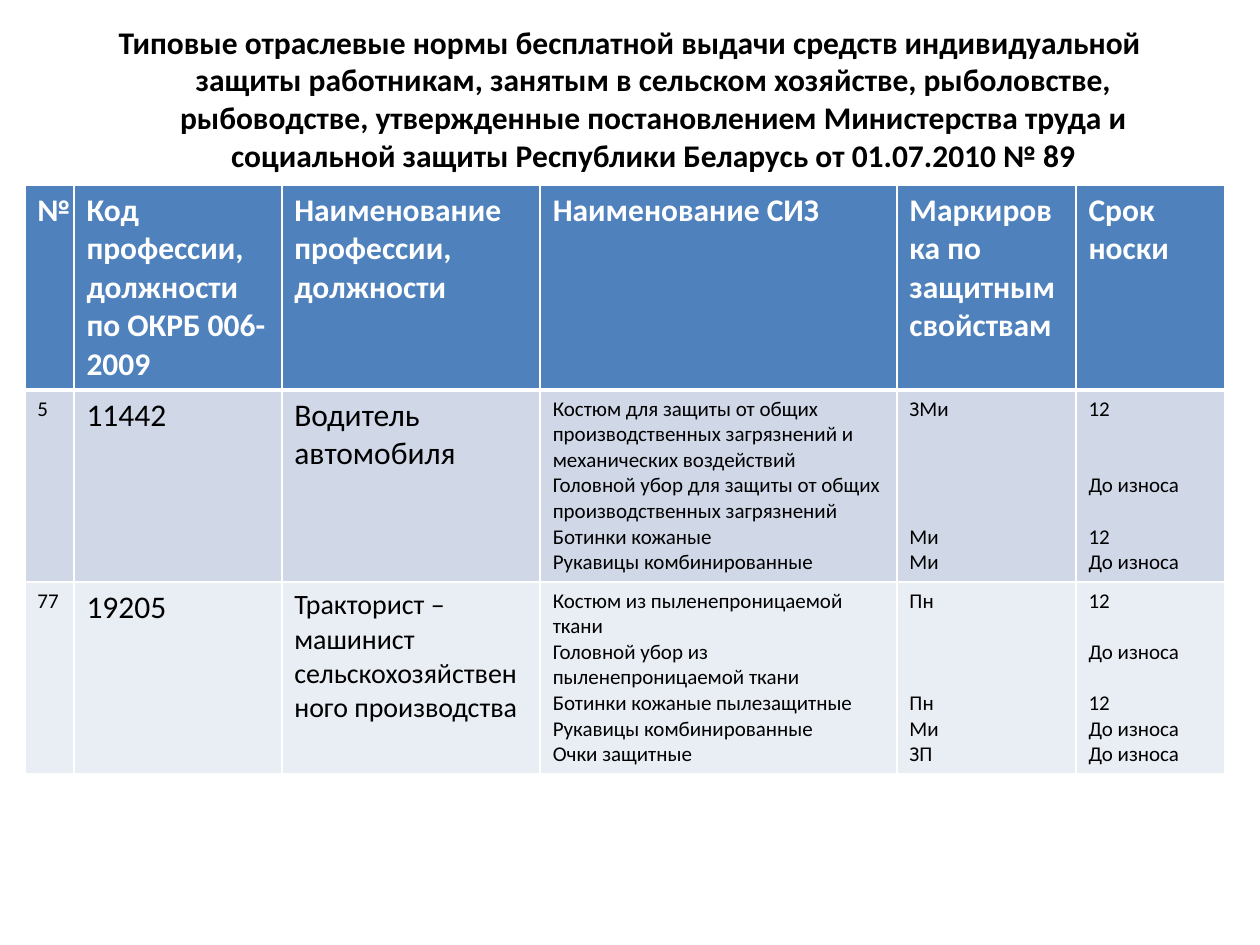
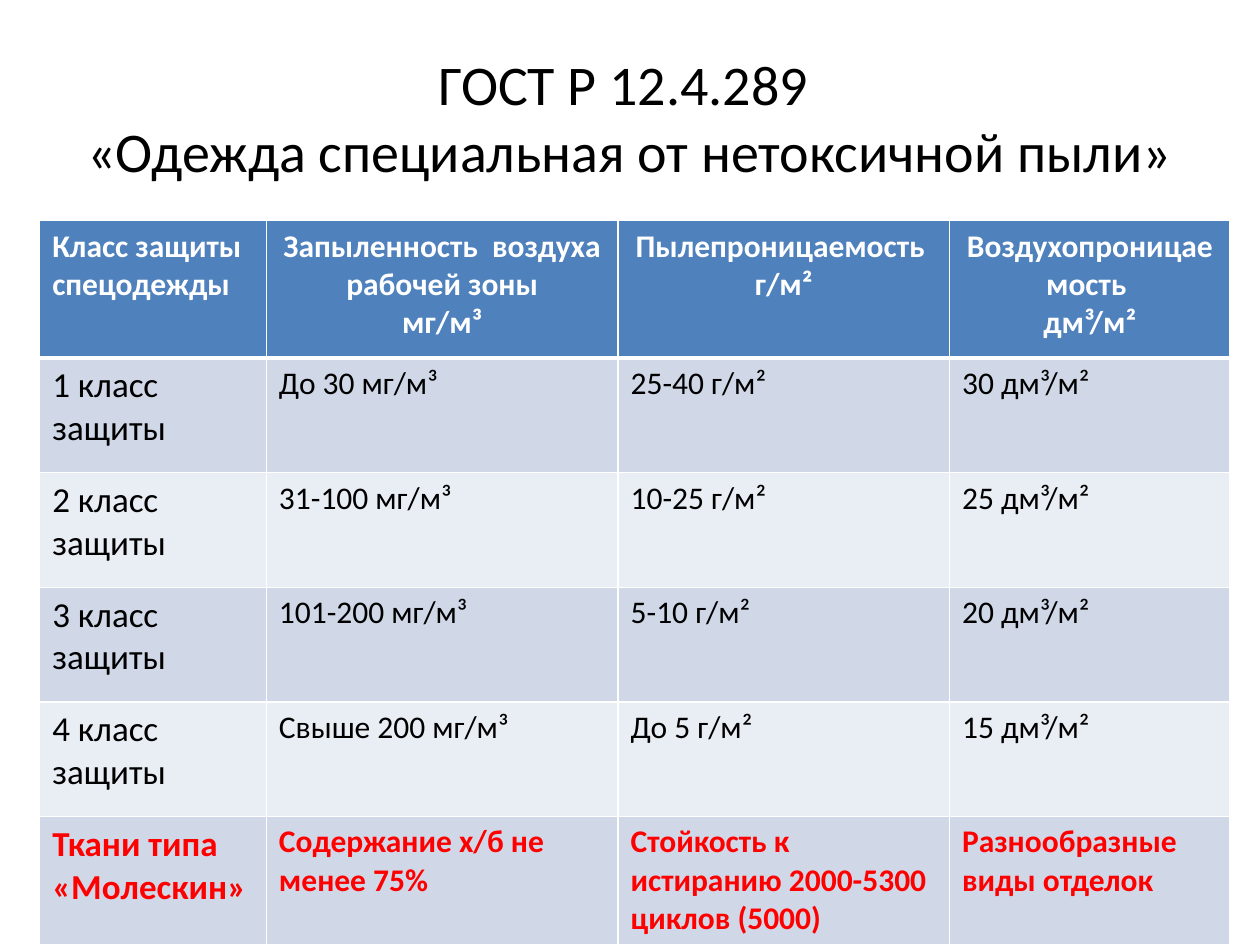
"""Build two slides on protective clothing norms and dust protection classes."""
from lxml import etree
from pptx import Presentation
from pptx.dml.color import RGBColor
from pptx.enum.text import MSO_ANCHOR, MSO_AUTO_SIZE, PP_ALIGN
from pptx.oxml.ns import qn
from pptx.util import Cm, Pt

COLORS = {
    "header": "4F81BD",
    "odd": "D0D8E8",
    "even": "E9EDF4",
    "white": "FFFFFF",
    "text": "000000",
    "accent": "FF0000",
}
FONT = "Calibri"
LINE_FACTOR = 1.22
SMALL = 12
HEADER_FORMAT = {"name": FONT, "size": Pt(18), "bold": True}

NORMS_TITLE = (
    "Типовые отраслевые нормы бесплатной выдачи средств индивидуальной защиты "
    "работникам, занятым в сельском хозяйстве, рыболовстве, рыбоводстве, "
    "утвержденные постановлением Министерства труда и социальной защиты "
    "Республики Беларусь от 01.07.2010 № 89"
)
NORMS_HEADER = [
    "№",
    "Код профессии, должности по ОКРБ 006-2009",
    "Наименование профессии, должности",
    "Наименование СИЗ",
    "Маркировка по защитным свойствам",
    "Срок носки",
]
DRIVER = [
    "5",
    "11442",
    "Водитель автомобиля",
    [
        "Костюм для защиты от общих производственных загрязнений и механических воздействий",
        "Головной убор для защиты от общих производственных загрязнений",
        "Ботинки кожаные",
        "Рукавицы комбинированные",
    ],
    ["ЗМи", (4, "Ми"), "Ми"],
    ["12", (2, "До износа"), (1, "12"), "До износа"],
]
TRACTOR_OPERATOR = [
    "77",
    "19205",
    "Тракторист –машинист сельскохозяйственного производства",
    [
        "Костюм из пыленепроницаемой ткани",
        "Головной убор из пыленепроницаемой ткани",
        "Ботинки кожаные пылезащитные",
        "Рукавицы комбинированные",
        "Очки защитные",
    ],
    ["Пн", (3, "Пн"), "Ми", "ЗП"],
    ["12", (1, "До износа"), (1, "12"), "До износа", "До износа"],
]

DUST_TITLE = "ГОСТ Р 12.4.289 \v«Одежда специальная от нетоксичной пыли»"
DUST_HEADER = [
    "Класс защиты спецодежды",
    ["Запыленность  воздуха рабочей зоны", "мг/м³"],
    ["Пылепроницаемость ", "г/м²"],
    ["Воздухопроницаемость ", "дм³/м²"],
]
DUST_LIMITS = [
    ("До 30", "25-40", 30),
    ("31-100", "10-25", 25),
    ("101-200", "5-10", 20),
    ("Свыше 200", "До 5", 15),
]
FABRIC = [
    "Ткани типа «Молескин»",
    "Содержание х/б не менее 75%",
    ["Стойкость к истиранию 2000-5300", "циклов (5000)"],
    "Разнообразные виды отделок",
]


def rgb(color):
    """Return the named colour."""
    return RGBColor.from_string(COLORS[color])


def format_font(font, formats, color):
    """Apply the format values and the colour to a font."""
    for attribute, value in formats.items():
        setattr(font, attribute, value)
    font.color.rgb = rgb(color)


def add_titled_slide(deck, heading, box, size, bold=False, anchor=MSO_ANCHOR.MIDDLE):
    """Add a title-only slide and format its title."""
    slide = deck.slides.add_slide(deck.slide_layouts[5])
    title = slide.shapes.title
    for side, length in zip(("left", "top", "width", "height"), box):
        setattr(title, side, Cm(length))
    title.text_frame.text = heading
    frame_formats = {"vertical_anchor": anchor, "auto_size": MSO_AUTO_SIZE.NONE, "word_wrap": True}
    for attribute, value in frame_formats.items():
        setattr(title.text_frame, attribute, value)
    paragraph = title.text_frame.paragraphs[0]
    paragraph.alignment = PP_ALIGN.CENTER
    for run in paragraph.runs:
        format_font(run.font, {"name": FONT, "size": Pt(size), "bold": bold}, "text")
    return slide


def hang_indent(paragraph, length):
    """Give a paragraph a hanging indent."""
    properties = paragraph._p.get_or_add_pPr()
    for attribute, value in {"marL": length, "indent": -length}.items():
        properties.set(attribute, str(int(value)))


def draw_borders(cell, top=1, bottom=1):
    """Draw white borders around a cell, with widths in points."""
    properties = cell._tc.get_or_add_tcPr()
    for side, width in {"lnL": 1, "lnR": 1, "lnT": top, "lnB": bottom}.items():
        line = etree.SubElement(properties, qn(f"a:{side}"), w=str(int(Pt(width))))
        fill = etree.SubElement(line, qn("a:solidFill"))
        etree.SubElement(fill, qn("a:srgbClr"), val=COLORS["white"])


def write_cell(cell, content, formats, color, alignment=PP_ALIGN.LEFT):
    """Write paragraphs; a (lines, text) pair leaves that many lines free above."""
    entries = [content] if isinstance(content, str) else content
    for index, entry in enumerate(entries):
        free_lines, text = (0, entry) if isinstance(entry, str) else entry
        frame = cell.text_frame
        paragraph = frame.paragraphs[0] if index == 0 else frame.add_paragraph()
        paragraph.alignment = alignment
        if free_lines:
            paragraph.space_before = Pt(round(free_lines * formats["size"].pt * LINE_FACTOR, 2))
        run = paragraph.add_run()
        run.text = text
        format_font(run.font, formats, color)


def add_grid(slide, corner, widths, heights, rows):
    """Add a banded table with empty cells."""
    frame = slide.shapes.add_table(
        rows, len(widths), *map(Cm, corner), Cm(sum(widths)), Cm(sum(heights))
    )
    grid = frame.table
    for column, width in zip(grid.columns, widths):
        column.width = Cm(width)
    for index, (row, height) in enumerate(zip(grid.rows, heights)):
        row.height = Cm(height)
        band = "header" if index == 0 else "odd" if index % 2 else "even"
        for cell in row.cells:
            draw_borders(cell, top=3 if index == 1 else 1, bottom=3 if index == 0 else 1)
            cell.fill.solid()
            cell.fill.fore_color.rgb = rgb(band)
    return grid


def write_header(grid, labels):
    """Write the header row, centring labels that carry a unit."""
    for cell, label in zip(grid.rows[0].cells, labels):
        alignment = PP_ALIGN.LEFT if isinstance(label, str) else PP_ALIGN.CENTER
        write_cell(cell, label, HEADER_FORMAT, "white", alignment)


def write_row(grid, index, contents, sizes, color="text", bold=False):
    """Write a body row with one text size per column."""
    for cell, content, size in zip(grid.rows[index].cells, contents, sizes):
        write_cell(cell, content, {"name": FONT, "size": Pt(size), "bold": bold}, color)


def build_norms(deck):
    """Build the slide with the issue norms."""
    slide = add_titled_slide(
        deck, NORMS_TITLE, (1.27, 0.33, 22.86, 3.4), 18, bold=True, anchor=MSO_ANCHOR.TOP
    )
    hang_indent(slide.shapes.title.text_frame.paragraphs[0], Cm(0.95))
    widths = (0.99, 4.19, 5.21, 7.19, 3.61, 3)
    norms = add_grid(slide, (0.5, 3.73), widths, (4.04, 3.86, 3.86), 3)
    write_header(norms, NORMS_HEADER)
    for index, (worker, job_size) in enumerate([(DRIVER, 18), (TRACTOR_OPERATOR, 16)], 1):
        write_row(norms, index, worker, (SMALL, 18, job_size, SMALL, SMALL, SMALL))


def build_dust_classes(deck):
    """Build the slide with the dust protection classes."""
    slide = add_titled_slide(deck, DUST_TITLE, (1.27, 0.76, 22.86, 3.18), 32)
    sizes = (20, 18, 18, 18)
    heights = [2.77] + [2.31] * (len(DUST_LIMITS) + 1)
    classes = add_grid(slide, (0.8, 4.45), (4.57, 7.09, 6.68, 5.66), heights, len(heights))
    write_header(classes, DUST_HEADER)
    for level, (dust, passage, air) in enumerate(DUST_LIMITS, 1):
        limits = [f"{level} класс защиты", f"{dust} мг/м³", f"{passage} г/м²", f"{air} дм³/м²"]
        write_row(classes, level, limits, sizes)
    write_row(classes, len(heights) - 1, FABRIC, sizes, color="accent", bold=True)


def main():
    """Build and save the presentation."""
    deck = Presentation()
    deck.slide_width, deck.slide_height = Cm(25.4), Cm(19.05)
    build_norms(deck)
    build_dust_classes(deck)
    deck.save("out.pptx")


if __name__ == "__main__":
    main()
